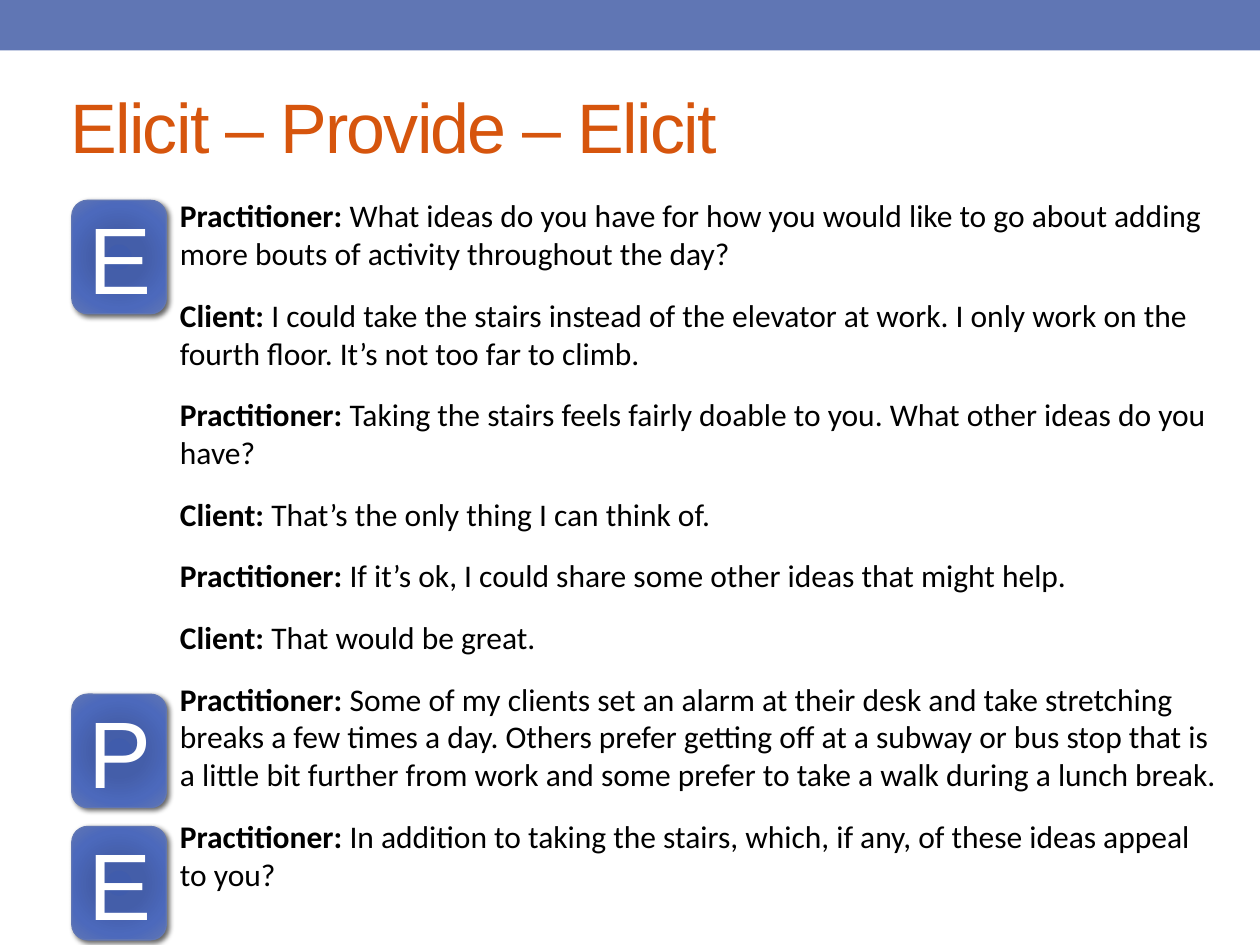
from pptx import Presentation
from pptx.dml.color import RGBColor
from pptx.enum.shapes import MSO_SHAPE
from pptx.enum.text import MSO_ANCHOR, PP_ALIGN
from pptx.oxml import parse_xml
from pptx.oxml.ns import nsdecls
from pptx.util import Inches, Pt

RECTANGLE = MSO_SHAPE.RECTANGLE
ROUNDED = MSO_SHAPE.ROUNDED_RECTANGLE
MIDDLE = MSO_ANCHOR.MIDDLE
TOP = MSO_ANCHOR.TOP
LEFT = PP_ALIGN.LEFT
CENTER = PP_ALIGN.CENTER

BLUE = "6076B4"
ORANGE = "D6550D"
GRADIENT = [(0, "405CAC"), (34, "445EA9"), (70, "4C69BC"), (100, BLUE)]
BADGES = [("E", 1.59), ("P", 5.51), ("E", 6.56)]
DIALOGUE = [
    ("Practitioner: ", "What ideas do you have for how you would like to go about "
     "adding more bouts of activity throughout the day?"),
    ("Client: ", "I could take the stairs instead of the elevator at work. "
     "I only work on the fourth floor. It’s not too far to climb."),
    ("Practitioner: ", "Taking the stairs feels fairly doable to you. "
     "What other ideas do you have?"),
    ("Client: ", "That’s the only thing I can think of."),
    ("Practitioner: ", "If it’s ok, I could share some other ideas that might help."),
    ("Client: ", "That would be great."),
    ("Practitioner: ", "Some of my clients set an alarm at their desk and take "
     "stretching breaks a few times a day. Others prefer getting off at a subway or "
     "bus stop that is a little bit further from work and some prefer to take a walk "
     "during a lunch break."),
    ("Practitioner: ", "In addition to taking the stairs, which, if any, of these "
     "ideas appeal to you?"),
]


def color(value):
    """Turn a hex string into a colour."""
    return RGBColor.from_string(value)


def add_run(paragraph, text, size=18, font="Calibri", fill="000000", bold=False,
            spacing=None):
    """Append a formatted run to a paragraph."""
    run = paragraph.add_run()
    run.text = text
    run.font.size = Pt(size)
    run.font.name = font
    run.font.bold = bold
    run.font.color.rgb = color(fill)
    if spacing is not None:
        run.font._element.set("spc", str(spacing))


def add_band(slide):
    """Draw the band along the top edge."""
    band = slide.shapes.add_shape(RECTANGLE, 0, 0, Inches(10), Inches(0.4))
    band.shadow.inherit = False
    band.fill.solid()
    band.fill.fore_color.rgb = color(BLUE)
    band.line.fill.background()


def format_title(slide, text):
    """Place and fill the title placeholder."""
    title = slide.shapes.title
    title.left, title.top = Inches(0.46), Inches(0.46)
    title.width, title.height = Inches(9), Inches(1.08)
    title.text_frame.vertical_anchor = MIDDLE
    paragraph = title.text_frame.paragraphs[0]
    paragraph.alignment = LEFT
    add_run(paragraph, text, size=40, font="Arial", fill=ORANGE, spacing=-100)


def add_dialogue(slide, lines):
    """Write the conversation with bold speaker names."""
    box = slide.shapes.add_textbox(Inches(1.33), Inches(1.51), Inches(8.45), Inches(5.51))
    frame = box.text_frame
    frame.word_wrap = True
    frame.vertical_anchor = TOP
    for index, (speaker, speech) in enumerate(lines):
        paragraph = frame.add_paragraph() if index else frame.paragraphs[0]
        paragraph.space_before = Pt(3.6)
        paragraph.space_after = Pt(10)
        add_run(paragraph, speaker, bold=True)
        add_run(paragraph, speech)


def add_badge(slide, letter, top):
    """Draw a rounded letter badge with a radial gradient and a shadow."""
    badge = slide.shapes.add_shape(ROUNDED, Inches(0.57), Inches(top),
                                   Inches(0.75), Inches(0.9))
    properties = badge._element.spPr
    stops = "".join(f'<a:gs pos="{position * 1000}"><a:srgbClr val="{value}"/></a:gs>'
                    for position, value in GRADIENT)
    properties.append(parse_xml(
        f'<a:gradFill {nsdecls("a")} rotWithShape="1"><a:gsLst>{stops}</a:gsLst>'
        '<a:path path="circle"><a:fillToRect l="100000" t="100000" r="100000" '
        'b="100000"/></a:path></a:gradFill>'))
    badge.line.color.rgb = color(BLUE)
    badge.line.width = Pt(0.75)
    properties.append(parse_xml(
        f'<a:effectLst {nsdecls("a")}><a:outerShdw blurRad="{Pt(3)}" dist="{Pt(2)}" '
        'dir="2700000" algn="tl" rotWithShape="0"><a:srgbClr val="000000">'
        '<a:alpha val="60000"/></a:srgbClr></a:outerShdw></a:effectLst>'))
    badge.text_frame.vertical_anchor = MIDDLE
    paragraph = badge.text_frame.paragraphs[0]
    paragraph.alignment = CENTER
    add_run(paragraph, letter, size=54, font="Arial", fill="FFFFFF")


def main():
    """Build and save the slide."""
    presentation = Presentation()
    presentation.slide_width = Inches(10)
    presentation.slide_height = Inches(7.5)
    slide = presentation.slides.add_slide(presentation.slide_layouts[5])
    add_band(slide)
    format_title(slide, "Elicit – Provide – Elicit")
    add_dialogue(slide, DIALOGUE)
    for letter, top in BADGES:
        add_badge(slide, letter, top)
    presentation.save("out.pptx")


if __name__ == "__main__":
    main()
